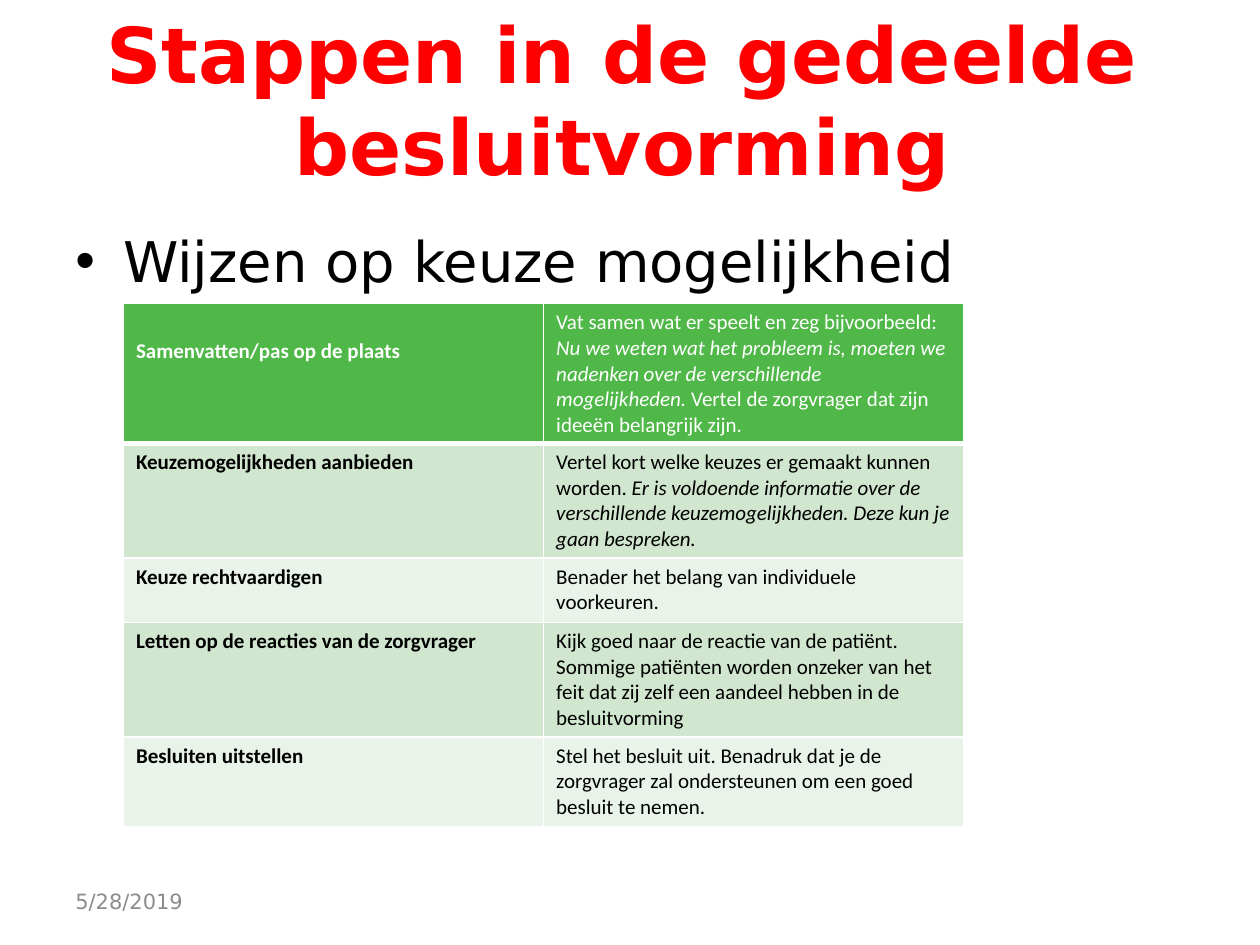
from lxml import etree
from pptx import Presentation
from pptx.dml.color import RGBColor
from pptx.enum import text
from pptx.oxml import ns
from pptx.util import Inches, Pt

WHITE = RGBColor(0xFF, 0xFF, 0xFF)
BLACK = RGBColor(0, 0, 0)
RED = RGBColor(0xFF, 0, 0)
GREY = RGBColor(0x8C, 0x8C, 0x8C)
GREEN = RGBColor(0x50, 0xB8, 0x48)
BANDS = (RGBColor(0xD0, 0xE6, 0xCF), RGBColor(0xE9, 0xF3, 0xE9))
HEADING_FONT = "DejaVu Sans"
TABLE_FONT = "Calibri"

STEPS = [
    (1.11, "Samenvatten/pas op de plaats",
     [("Vat samen wat er speelt en zeg bijvoorbeeld: ", False),
      ("Nu we weten wat het probleem is, moeten we nadenken over de "
       "verschillende mogelijkheden. ", True),
      ("Vertel de zorgvrager dat zijn ideeën belangrijk zijn.", False)]),
    (0.91, "Keuzemogelijkheden aanbieden",
     [("Vertel kort welke keuzes er gemaakt kunnen worden. ", False),
      ("Er is voldoende informatie over de verschillende "
       "keuzemogelijkheden. Deze kun je gaan bespreken.", True)]),
    (0.51, "Keuze rechtvaardigen",
     [("Benader het belang van individuele voorkeuren.", False)]),
    (0.91, "Letten op de reacties van de zorgvrager",
     [("Kijk goed naar de reactie van de patiënt. Sommige patiënten worden "
       "onzeker van het feit dat zij zelf een aandeel hebben in de "
       "besluitvorming", False)]),
    (0.71, "Besluiten uitstellen",
     [("Stel het besluit uit. Benadruk dat je de zorgvrager zal ondersteunen "
       "om een goed besluit te nemen.", False)]),
]


def add_run(paragraph, words, font, size, color, bold=False, italic=False):
    """Append one styled run to a paragraph."""
    run = paragraph.add_run()
    run.text = words
    run.font.name = font
    run.font.size = Pt(size)
    run.font.color.rgb = color
    run.font.bold = bold
    run.font.italic = italic


def add_text(slide, box, words, size, color, bold=False,
             anchor=text.MSO_ANCHOR.MIDDLE):
    """Place a wrapped line of heading text and return its paragraph."""
    frame = slide.shapes.add_textbox(*map(Inches, box)).text_frame
    frame.word_wrap = True
    frame.vertical_anchor = anchor
    paragraph = frame.paragraphs[0]
    add_run(paragraph, words, HEADING_FONT, size, color, bold)
    return paragraph


def add_bullet(paragraph, indent):
    """Give a paragraph a hanging round bullet."""
    properties = paragraph._p.get_or_add_pPr()
    properties.set("marL", str(Inches(indent)))
    properties.set("indent", str(-Inches(indent)))
    font = etree.SubElement(properties, ns.qn("a:buFont"))
    font.set("typeface", "Arial")
    bullet = etree.SubElement(properties, ns.qn("a:buChar"))
    bullet.set("char", "•")


def add_borders(cell, bottom_width, top_width):
    """Draw white lines around a cell, ahead of its fill."""
    properties = cell._tc.get_or_add_tcPr()
    widths = {"lnL": 1, "lnR": 1, "lnT": top_width, "lnB": bottom_width}
    for index, (side, width) in enumerate(widths.items()):
        line = etree.Element(ns.qn(f"a:{side}"), w=str(Pt(width)))
        fill = etree.SubElement(line, ns.qn("a:solidFill"))
        etree.SubElement(fill, ns.qn("a:srgbClr"), val=str(WHITE))
        properties.insert(index, line)


def add_steps_table(slide, box):
    """Place the two-column table of steps in its box."""
    table = slide.shapes.add_table(len(STEPS), 2, *map(Inches, box)).table
    for column in table.columns:
        column.width = Inches(box[2] / 2)
    for row, (height, step, advice) in enumerate(STEPS):
        table.rows[row].height = Inches(height)
        header = row == 0
        color = WHITE if header else BLACK
        label, detail = table.cell(row, 0), table.cell(row, 1)
        add_run(label.text_frame.paragraphs[0], step, TABLE_FONT, 12, color, True)
        for words, italic in advice:
            add_run(detail.text_frame.paragraphs[0], words, TABLE_FONT, 12,
                    color, italic=italic)
        for cell in (label, detail):
            cell.fill.solid()
            cell.fill.fore_color.rgb = GREEN if header else BANDS[(row - 1) % 2]
            add_borders(cell, 3 if header else 1, 3 if row == 1 else 1)
    table.cell(0, 0).margin_top = Inches(0.28)


def main():
    """Build and save the slide."""
    presentation = Presentation()
    presentation.slide_width = Inches(10)
    presentation.slide_height = Inches(7.5)
    slide = presentation.slides.add_slide(presentation.slide_layouts[6])
    title = add_text(slide, (0.44, 0.16, 9, 1.25),
                     "Stappen in de gedeelde besluitvorming", 44, RED, True)
    title.alignment = text.PP_ALIGN.CENTER
    point = add_text(slide, (0.5, 1.75, 9, 4.95), "Wijzen op keuze mogelijkheid",
                     32, BLACK, anchor=text.MSO_ANCHOR.TOP)
    add_bullet(point, 0.38)
    add_text(slide, (0.5, 6.95, 2.33, 0.4), "5/28/2019", 12, GREY)
    add_steps_table(slide, (0.98, 2.41, 6.67, sum(step[0] for step in STEPS)))
    presentation.save("out.pptx")


if __name__ == "__main__":
    main()
